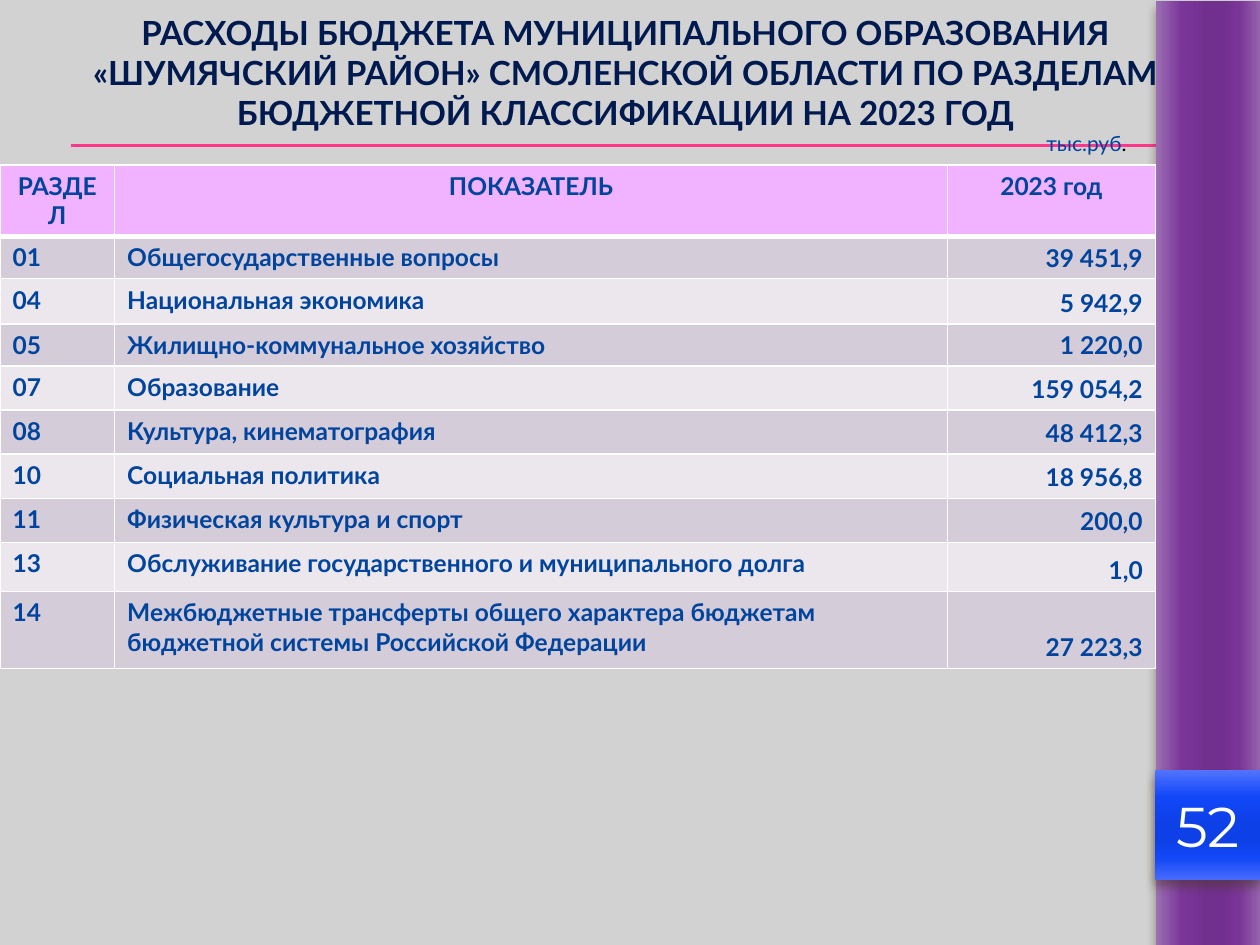
"""Build the slide with district budget spending by section."""
from dataclasses import dataclass
from typing import NamedTuple

from lxml import etree
from pptx import Presentation
from pptx import util as u
from pptx.dml import color as col
from pptx.enum import shapes, text
from pptx.oxml import ns

WHITE, BLUE = "FFFFFF", "00449E"
LEFT, MID, RIGHT = text.PP_ALIGN.LEFT, text.PP_ALIGN.CENTER, text.PP_ALIGN.RIGHT
TOP, BASE = text.MSO_ANCHOR.TOP, text.MSO_ANCHOR.BOTTOM
STOPS = (0, 25, 50, 65, 80, 100)


class Row(NamedTuple):
    code: str
    name: str
    sum: str
    high: float


@dataclass
class Band:
    box: tuple
    tones: tuple
    turn: int = 0


HEAD = Row("РАЗДЕЛ", "ПОКАЗАТЕЛЬ", "2023 год", 0.34)
ROWS = [
    Row("01", "Общегосударственные вопросы", "39 451,9", 0.3),
    Row("04", "Национальная экономика", "5 942,9", 0.36),
    Row("05", "Жилищно-коммунальное хозяйство", "1 220,0", 0.26),
    Row("07", "Образование", "159 054,2", 0.35),
    Row("08", "Культура, кинематография", "48 412,3", 0.35),
    Row("10", "Социальная политика", "18 956,8", 0.35),
    Row("11", "Физическая культура и спорт", "200,0", 0.35),
    Row("13", "Обслуживание государственного и муниципального долга", "1,0", 0.39),
    Row("14", "Межбюджетные трансферты общего характера бюджетам "
        "бюджетной системы Российской Федерации", "27 223,3", 0.61),
]
SIDE = Band((5.84, 3.34, 7.5, 0.83),
            ("9C6FB3", "7A3599", "71308E", "71308E", "7A3598", "9566AD"), 270)
PAGE = Band((9.17, 6.11, 0.83, 0.87),
            ("5374FF", "1147F8", "0E40E7", "0E40E7", "1147F6", "476AFD"))


def rgb(code: str) -> col.RGBColor:
    """Turn a hex string into a colour."""
    return col.RGBColor.from_string(code)


def node(xml: str):
    """Parse a fragment in the drawing namespace."""
    return etree.fromstring(f'<root {ns.nsdecls("a")}>{xml}</root>')[0]


def edge(tag: str, code: str, wide: float):
    """Make an outline element."""
    return node(f'<a:{tag} w="{int(u.Pt(wide))}"><a:solidFill>'
                f'<a:srgbClr val="{code}"/></a:solidFill></a:{tag}>')


def style(run, size: float, tone: str = BLUE, face: str = "Lato", bold: bool = False) -> None:
    """Format one run."""
    for key, val in {"size": u.Pt(size), "name": face, "bold": bold}.items():
        setattr(run.font, key, val)
    run.font.color.rgb = rgb(tone)


def write(frame, words: str, align, **look):
    """Add a run to the first paragraph of a frame."""
    para = frame.paragraphs[0]
    para.alignment = align
    run = para.add_run()
    run.text = words
    style(run, **look)
    return run


def rule(slide, high: float) -> None:
    """Draw a thin pink line under the title."""
    line = slide.shapes.add_connector(
        shapes.MSO_CONNECTOR.STRAIGHT, u.Inches(0.56), u.Inches(high),
        u.Inches(10), u.Inches(high))
    line.line.color.rgb = rgb("FF388C")
    line.line.width = u.Pt(0.75)
    line._element.spPr.append(node("<a:effectLst/>"))


def draw(slide, band: Band):
    """Draw a rectangle with a gradient and a soft shadow."""
    box = slide.shapes.add_shape(shapes.MSO_SHAPE.RECTANGLE, *map(u.Inches, band.box))
    box.rotation = band.turn
    box.line.fill.background()
    stops = "".join(f'<a:gs pos="{pos * 1000}"><a:srgbClr val="{tone}"/></a:gs>'
                    for pos, tone in zip(STOPS, band.tones))
    props = box._element.spPr
    props.insert(2, node(f'<a:gradFill rotWithShape="1"><a:gsLst>{stops}</a:gsLst>'
                         '<a:lin ang="5400000" scaled="0"/></a:gradFill>'))
    props.append(node(
        f'<a:effectLst><a:outerShdw blurRad="{int(u.Pt(6))}" dist="{int(u.Pt(4))}" '
        'dir="5400000" rotWithShape="0"><a:srgbClr val="4E3B30">'
        '<a:alpha val="60000"/></a:srgbClr></a:outerShdw></a:effectLst>'))
    return box


def fill_cell(cell, words: str, tone: str, align, anchor, top: int, low: int) -> None:
    """Fill, border and letter one table cell."""
    cell.fill.solid()
    cell.fill.fore_color.rgb = rgb(tone)
    cell.vertical_anchor = anchor
    write(cell.text_frame, words, align, size=14, bold=True)
    props = cell._tc.get_or_add_tcPr()
    for i, (tag, wide) in enumerate({"lnL": 1, "lnR": 1, "lnT": top, "lnB": low}.items()):
        props.insert(i, edge(tag, WHITE, wide))


def add_grid(slide) -> None:
    """Lay out the spending table."""
    rows = [HEAD, *ROWS]
    grid = slide.shapes.add_table(
        len(rows), 3, 0, u.Inches(1.31), u.Inches(9.17), u.Inches(3.66)).table
    for part, wide in zip(grid.columns, (0.91, 6.61, 1.65)):
        part.width = u.Inches(wide)
    for r, row in enumerate(rows):
        grid.rows[r].height = u.Inches(row.high)
        tone = ("EBE7EC", "D4CCD8")[r % 2] if r else "F1B2FF"
        for c, words in enumerate(row[:3]):
            align = (LEFT, LEFT, RIGHT)[c] if r else MID
            anchor = BASE if r and c == 2 else TOP
            fill_cell(grid.cell(r, c), words, tone, align, anchor,
                      3 if r == 1 else 1, 1 if r else 3)


def add_title(slide) -> None:
    """Place and letter the title."""
    title = slide.shapes.title
    box = map(u.Inches, (0.43, 0, 9.07, 1.15))
    for key, val in zip(("left", "top", "width", "height"), box):
        setattr(title, key, val)
    frame = title.text_frame
    frame.auto_size = text.MSO_AUTO_SIZE.NONE
    frame.vertical_anchor = text.MSO_ANCHOR.MIDDLE
    run = write(frame, "РАСХОДЫ БЮДЖЕТА МУНИЦИПАЛЬНОГО ОБРАЗОВАНИЯ «ШУМЯЧСКИЙ РАЙОН» "
                "СМОЛЕНСКОЙ ОБЛАСТИ ПО РАЗДЕЛАМ БЮДЖЕТНОЙ КЛАССИФИКАЦИИ НА 2023 ГОД",
                MID, size=19, tone="001A4F", bold=True)
    run._r.get_or_add_rPr().insert(0, edge("ln", "4E005F", 0.71))
    slide.shapes._spTree.append(title._element)


def add_unit(slide) -> None:
    """Add the unit of measure above the table."""
    box = slide.shapes.add_textbox(*map(u.Inches, (8.07, 0.99, 0.97, 0.3)))
    frame = box.text_frame
    frame.word_wrap = True
    frame.auto_size = text.MSO_AUTO_SIZE.SHAPE_TO_FIT_TEXT
    write(frame, "тыс.руб", RIGHT, size=12)
    write(frame, ".", RIGHT, size=12, tone="000000")


def main() -> None:
    """Build and save the deck."""
    deck = Presentation()
    deck.slide_width, deck.slide_height = u.Inches(10), u.Inches(7.5)
    slide = deck.slides.add_slide(deck.slide_layouts[5])
    back = slide.background.fill
    back.solid()
    back.fore_color.rgb = rgb("D2D2D2")
    for high in (1.15, 1.16):
        rule(slide, high)
    draw(slide, SIDE)
    add_title(slide)
    add_grid(slide)
    page = draw(slide, PAGE).text_frame
    page.vertical_anchor = text.MSO_ANCHOR.MIDDLE
    write(page, "52", MID, size=32, tone=WHITE, face="Montserrat")
    add_unit(slide)
    deck.save("out.pptx")


if __name__ == "__main__":
    main()
